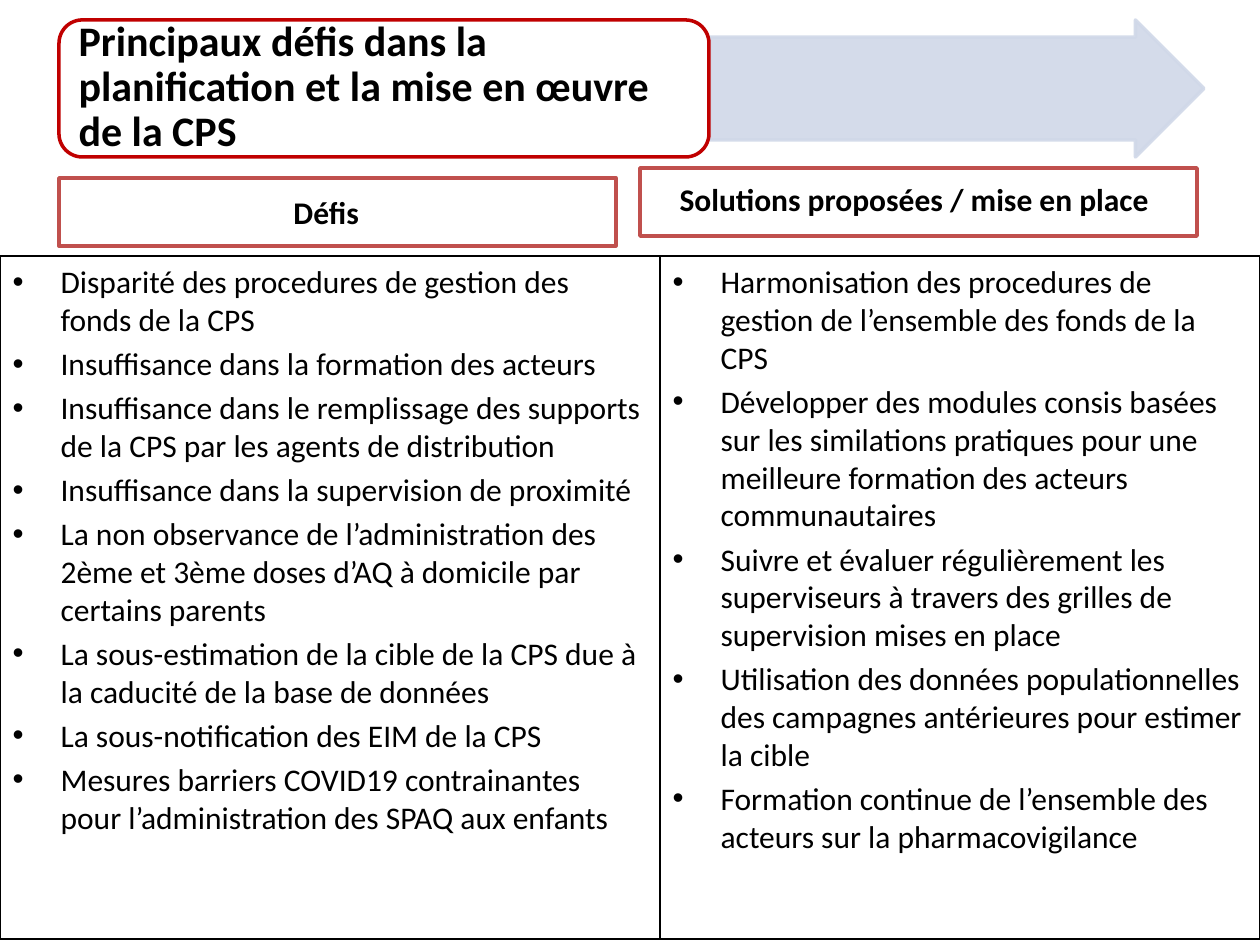
"""Build the slide on challenges and solutions in planning the CPS."""
from lxml.etree import SubElement
from pptx import Presentation
from pptx.dml.color import RGBColor
from pptx.enum.shapes import MSO_SHAPE as Shape
from pptx.enum.text import MSO_ANCHOR as Anchor, MSO_AUTO_SIZE as AutoSize, PP_ALIGN as Align
from pptx.oxml.ns import qn
from pptx.util import Pt

TITLE = "Principaux défis dans la planification et la mise en œuvre de la CPS"
CHALLENGES = [
    "Disparité des procedures de gestion des fonds de la CPS",
    "Insuffisance dans la formation des acteurs",
    "Insuffisance dans le remplissage des supports de la CPS par les agents de distribution",
    "Insuffisance dans la supervision de proximité",
    "La non observance de l’administration des 2ème et 3ème doses d’AQ à domicile par certains parents",
    "La sous-estimation de la cible de la CPS due à la caducité de la base de données",
    "La sous-notification des EIM de la CPS",
    "Mesures barriers COVID19 contrainantes pour l’administration des SPAQ aux enfants",
]
SOLUTIONS = [
    "Harmonisation des procedures de gestion de l’ensemble des fonds de la CPS",
    "Développer des modules consis basées sur les similations pratiques pour une meilleure "
    "formation des acteurs communautaires",
    "Suivre et évaluer régulièrement les superviseurs à travers des grilles de supervision mises en place",
    "Utilisation des données populationnelles des campagnes antérieures pour estimer la cible",
    "Formation continue de l’ensemble des acteurs sur la pharmacovigilance",
]
HEADINGS = [
    {"text": "Défis", "holder": 1, "box": (59, 178, 557, 68), "right": 35, "bottom": 6},
    {"text": "Solutions proposées / mise en place", "holder": 3, "box": (640, 168, 557, 68),
     "right": 21, "bottom": 12},
]
LISTS = [
    {"items": CHALLENGES, "holder": 2, "left": 0, "width": 660},
    {"items": SOLUTIONS, "holder": 4, "left": 660, "width": 600},
]
SLIDE_SIZE = (1260, 945)
ARROW_BOX, FRAME_BOX, TITLE_BOX = (710, 20, 494, 137), (59, 20, 650, 137), (66, 26, 638, 124)
LIST_TOP, LIST_HEIGHT, INDENT = 256, 683, 48
BLACK, WHITE, RED, BRICK, PALE = "000000", "FFFFFF", "C00000", "C0504D", "D0D8E8"


def px(length):
    return round(length * 914400 / 126)


def color(value):
    return RGBColor.from_string(value)


def place(shape, box):
    shape.left, shape.top, shape.width, shape.height = map(px, box)


def paint(shape, fill, line, width):
    if fill:
        shape.fill.solid()
        shape.fill.fore_color.rgb = color(fill)
    shape.line.color.rgb = color(line)
    shape.line.width = Pt(width)


def write(shape, texts, size, bold, align, anchor):
    frame = shape.text_frame
    frame.text = "\n".join(texts)
    frame.word_wrap, frame.auto_size, frame.vertical_anchor = True, AutoSize.NONE, anchor
    for paragraph in frame.paragraphs:
        paragraph.alignment = align
        font = paragraph.font
        font.name, font.size, font.bold = "Calibri", Pt(size), bold
        font.color.rgb = color(BLACK)
    return frame


def add_bullet(paragraph):
    properties = paragraph._p.get_or_add_pPr()
    properties.set("marL", str(px(INDENT)))
    properties.set("indent", str(-px(INDENT)))
    paragraph.space_before = Pt(3.6)
    bullet = properties.makeelement(qn("a:buChar"), {"char": "•"})
    properties.find(qn("a:spcBef")).addnext(bullet)


def add_backdrop(slide, kind, box, fill, line, adjustments):
    shape = slide.shapes.add_shape(kind, *map(px, box))
    shape.shadow.inherit = False
    paint(shape, fill, line, 2)
    for index, value in enumerate(adjustments):
        shape.adjustments[index] = value
    slide.shapes.title.element.addprevious(shape.element)
    return shape


def main():
    presentation = Presentation()
    presentation.slide_width, presentation.slide_height = map(px, SLIDE_SIZE)
    slide = presentation.slides.add_slide(presentation.slide_layouts.get_by_name("Comparison"))
    holders = {holder.placeholder_format.idx: holder for holder in slide.placeholders}

    arrow = add_backdrop(slide, Shape.RIGHT_ARROW, ARROW_BOX, PALE, PALE, (0.75, 0.5))
    for rgb in arrow.element.spPr.iter(qn("a:srgbClr")):
        SubElement(rgb, qn("a:alpha"), val="90000")
    add_backdrop(slide, Shape.ROUNDED_RECTANGLE, FRAME_BOX, WHITE, RED, (0.17,))

    title = slide.shapes.title
    place(title, TITLE_BOX)
    frame = write(title, [TITLE], 24, True, Align.LEFT, Anchor.MIDDLE)
    frame.margin_top = frame.margin_bottom = 0
    frame.paragraphs[0].line_spacing = 0.9

    for heading in HEADINGS:
        shape = holders[heading["holder"]]
        place(shape, heading["box"])
        paint(shape, WHITE, BRICK, 2)
        frame = write(shape, [heading["text"]], 18, True, Align.CENTER, Anchor.MIDDLE)
        frame.margin_right, frame.margin_bottom = px(heading["right"]), px(heading["bottom"])
        frame.paragraphs[0].space_before = Pt(0)

    for column in LISTS:
        shape = holders[column["holder"]]
        place(shape, (column["left"], LIST_TOP, column["width"], LIST_HEIGHT))
        paint(shape, None, BLACK, 0.75)
        frame = write(shape, column["items"], 18, False, Align.LEFT, Anchor.TOP)
        for paragraph in frame.paragraphs:
            add_bullet(paragraph)

    presentation.save("out.pptx")


if __name__ == "__main__":
    main()
